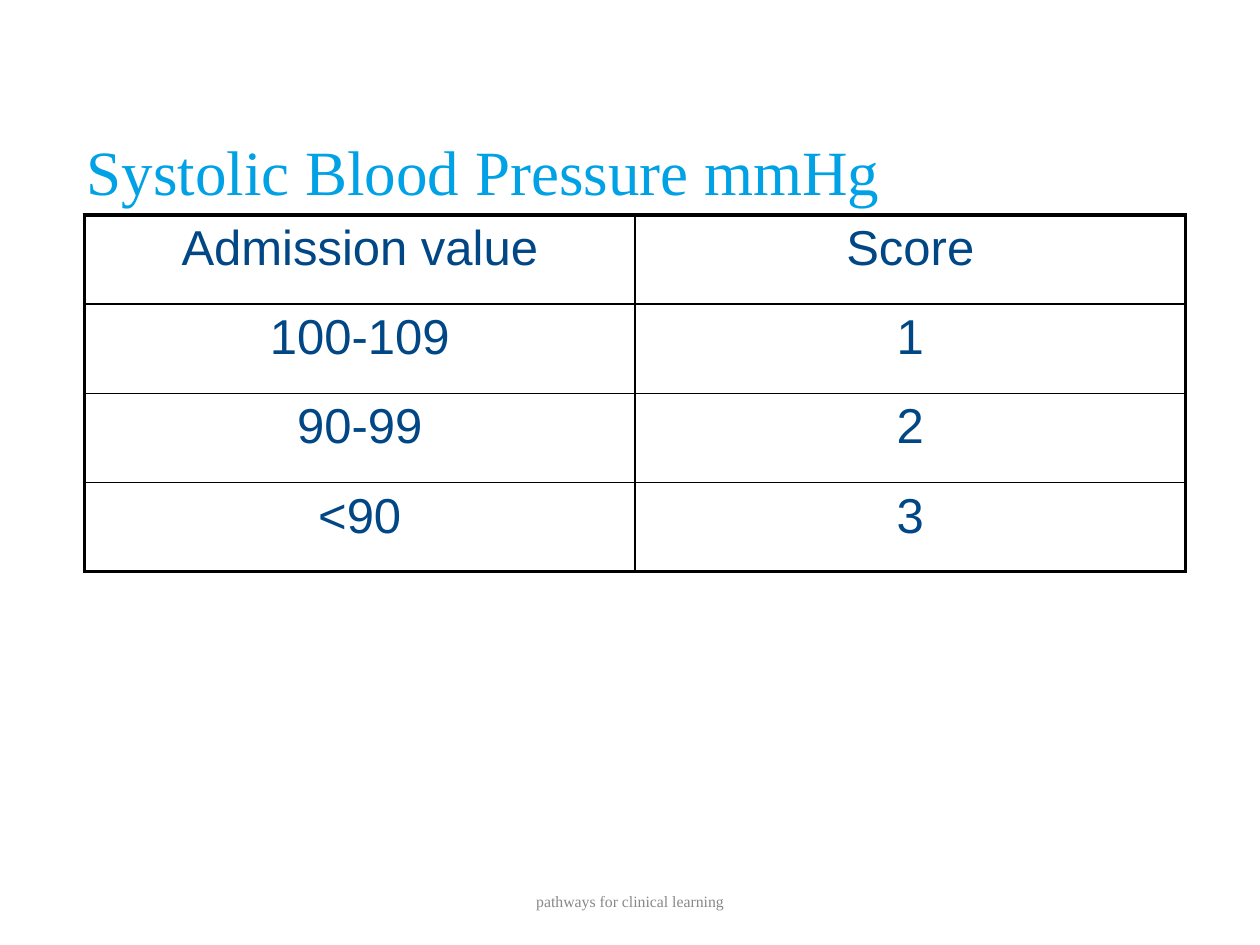
import lxml.etree
import pptx
import pptx.dml.color
import pptx.enum.text
import pptx.oxml.ns
import pptx.util

Inches = pptx.util.Inches
Pt = pptx.util.Pt
RGBColor = pptx.dml.color.RGBColor
ALIGN = pptx.enum.text.PP_ALIGN
ANCHOR = pptx.enum.text.MSO_ANCHOR

SKY = RGBColor(0x00, 0xA1, 0xE5)
NAVY = RGBColor(0x01, 0x47, 0x85)
GRAY = RGBColor(0x88, 0x88, 0x88)
BLACK = RGBColor(0, 0, 0)

SERIF, SANS = "Times New Roman", "Arial"
OUTER_BORDER, INNER_BORDER = 2.25, 1
COLUMN_WIDTH, ROW_HEIGHT = Inches(4.37), Pt(51)

SCORES = [
    ("Admission value", "Score"),
    ("100-109", "1"),
    ("90-99", "2"),
    ("<90", "3"),
]


def write(frame, text, font_name, size, color, align):
    paragraph = frame.paragraphs[0]
    paragraph.alignment = align
    run = paragraph.add_run()
    run.text = text
    run.font.name = font_name
    run.font.size = Pt(size)
    run.font.color.rgb = color


def add_title(slide, text):
    title = slide.shapes.title
    title.left, title.top = Inches(0.59), Inches(0.99)
    title.width, title.height = Inches(8.27), Inches(0.7)
    frame = title.text_frame
    frame.word_wrap = True
    frame.auto_size = pptx.enum.text.MSO_AUTO_SIZE.NONE
    frame.vertical_anchor = ANCHOR.BOTTOM
    frame.margin_bottom = Inches(0.04)
    write(frame, text, SERIF, 36, SKY, ALIGN.LEFT)


def set_borders(cell, widths):
    """Draw the cell's edges; widths maps left, right, top, bottom to points."""
    properties = cell._tc.get_or_add_tcPr()
    for index, (edge, width) in enumerate(widths.items()):
        line = lxml.etree.Element(pptx.oxml.ns.qn(f"a:ln{edge}"), w=str(Pt(width)))
        fill = lxml.etree.SubElement(line, pptx.oxml.ns.qn("a:solidFill"))
        lxml.etree.SubElement(fill, pptx.oxml.ns.qn("a:srgbClr"), val=str(BLACK))
        properties.insert(index, line)


def add_score_table(slide, scores):
    rows, columns = len(scores), len(scores[0])
    table = slide.shapes.add_table(
        rows, columns, Inches(0.67), Pt(122.75),
        columns * COLUMN_WIDTH, rows * ROW_HEIGHT).table
    table.first_row = table.horz_banding = False
    for row, values in enumerate(scores):
        for column, value in enumerate(values):
            cell = table.cell(row, column)
            cell.fill.background()
            write(cell.text_frame, value, SANS, 28, NAVY, ALIGN.CENTER)
            on_outside = {
                "L": column == 0,
                "R": column == columns - 1,
                "T": row == 0,
                "B": row == rows - 1,
            }
            set_borders(cell, {edge: OUTER_BORDER if outside else INNER_BORDER
                               for edge, outside in on_outside.items()})


def add_footer(slide, text):
    footer = slide.shapes.add_textbox(
        Inches(3.31), Inches(6.95), Inches(3.38), Inches(0.4))
    frame = footer.text_frame
    frame.word_wrap = True
    frame.vertical_anchor = ANCHOR.MIDDLE
    write(frame, text, SERIF, 9, GRAY, ALIGN.CENTER)


def main():
    deck = pptx.Presentation()
    deck.slide_width, deck.slide_height = Inches(10), Inches(7.5)
    slide = deck.slides.add_slide(deck.slide_layouts.get_by_name("Title Only"))
    add_footer(slide, "pathways for clinical learning")
    add_score_table(slide, SCORES)
    add_title(slide, "Systolic Blood Pressure mmHg")
    deck.save("out.pptx")


if __name__ == "__main__":
    main()
